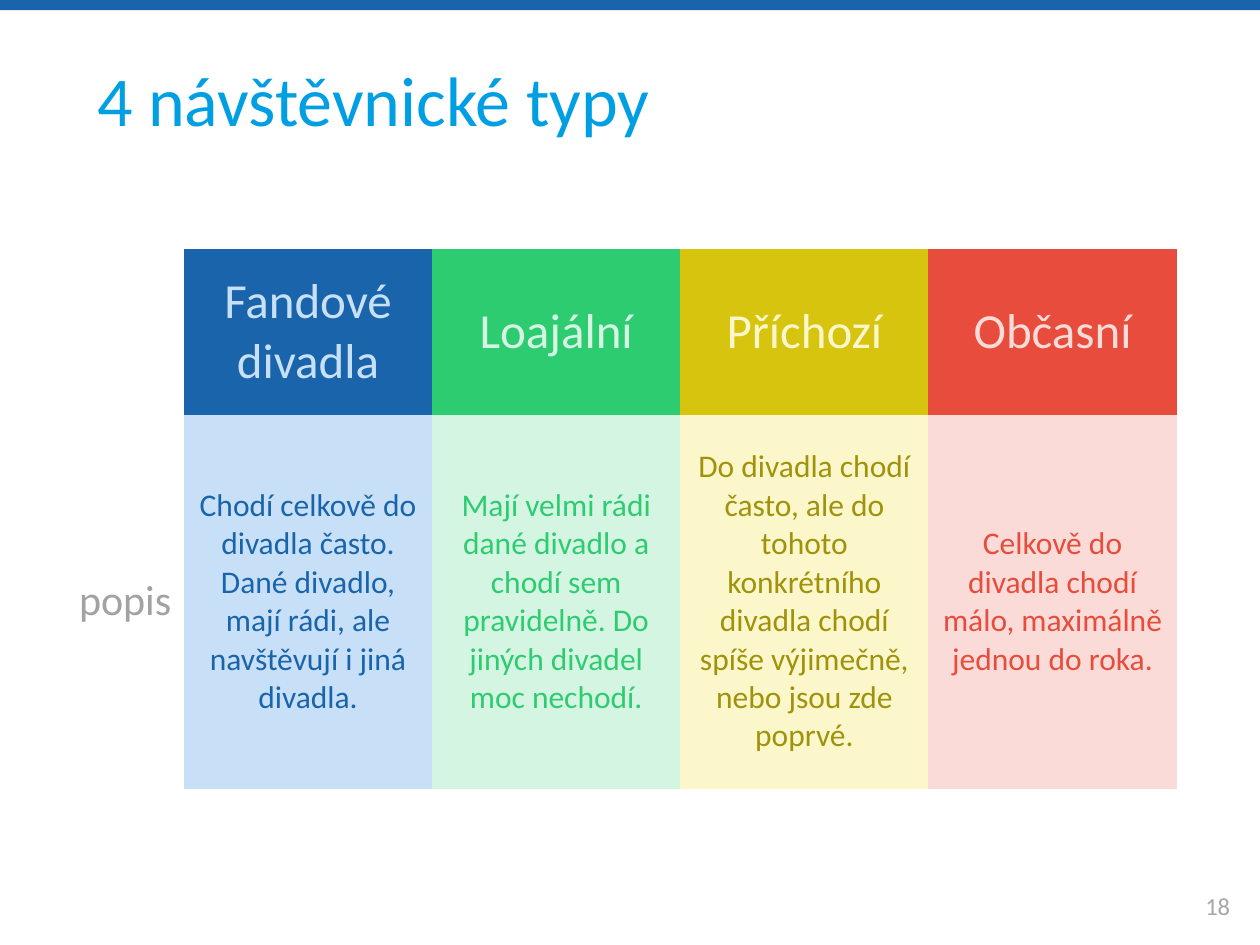
"""Build a slide that describes four types of theatre visitors in a table."""
from pptx import Presentation
from pptx.dml.color import RGBColor
from pptx.enum.shapes import MSO_SHAPE
from pptx.enum.text import MSO_ANCHOR, MSO_AUTO_SIZE, PP_ALIGN
from pptx.oxml.ns import qn
from pptx.util import Inches, Pt

LEFT, CENTER, RIGHT = PP_ALIGN.LEFT, PP_ALIGN.CENTER, PP_ALIGN.RIGHT
TOP, MIDDLE = MSO_ANCHOR.TOP, MSO_ANCHOR.MIDDLE
RECTANGLE = MSO_SHAPE.RECTANGLE
NO_AUTOFIT = MSO_AUTO_SIZE.NONE

FONT = "Calibri"
NO_STYLE_NO_GRID = "{2D5ABB26-0587-4C30-8999-92F81FD0307C}"
COLORS = {
    "title": "009FE3", "label": "A2A2A2", "number": "A6A6A6",
    "blue": "1964AA", "pale blue": "C8E0F7",
    "green": "2ECC71", "pale green": "D5F5E3",
    "yellow": "D6C40F", "pale yellow": "FBF7CA", "dark yellow": "A0930B",
    "red": "E74C3C", "pale red": "FADBD8",
}
TITLE = "4 návštěvnické typy"
PAGE_NUMBER = "18"
ROW_LABEL = "popis"
VISITOR_TYPES = [
    ("Fandové divadla",
     "Chodí celkově do divadla často. Dané divadlo, mají rádi, ale navštěvují i jiná divadla.",
     "blue", "pale blue", "blue"),
    ("Loajální",
     "Mají velmi rádi dané divadlo a chodí sem pravidelně. Do jiných divadel moc nechodí.",
     "green", "pale green", "green"),
    ("Příchozí",
     "Do divadla chodí často, ale do tohoto konkrétního divadla chodí spíše výjimečně, "
     "nebo jsou zde poprvé.",
     "yellow", "pale yellow", "dark yellow"),
    ("Občasní",
     "Celkově do divadla chodí málo, maximálně jednou do roka.",
     "red", "pale red", "red"),
]
LABEL_WIDTH, TYPE_WIDTH = 1.03, 1.97
ROW_HEIGHTS = (1.31, 2.97)


def rgb(name):
    return RGBColor.from_string(COLORS[name])


def write(text_frame, text, size, color, alignment):
    text_frame.text = text
    paragraph = text_frame.paragraphs[0]
    paragraph.alignment = alignment
    font = paragraph.runs[0].font
    font.name, font.size = FONT, Pt(size)
    font.color.rgb = rgb(color)


def fill_cell(cell, text, size, color, background, alignment=CENTER):
    write(cell.text_frame, text, size, color, alignment)
    cell.vertical_anchor = MIDDLE
    if background:
        cell.fill.solid()
        cell.fill.fore_color.rgb = rgb(background)


def add_top_band(slide, width):
    band = slide.shapes.add_shape(RECTANGLE, 0, 0, width, Inches(0.08))
    band.shadow.inherit = False
    band.fill.solid()
    band.fill.fore_color.rgb = rgb("blue")
    band.line.fill.background()


def add_title(slide):
    title = slide.shapes.title
    title.left, title.top = Inches(0.67), Inches(0.4)
    title.width, title.height = Inches(8.66), Inches(1.57)
    write(title.text_frame, TITLE, 40, "title", LEFT)
    title.text_frame.vertical_anchor = TOP
    title.text_frame.auto_size = NO_AUTOFIT


def add_page_number(slide):
    box = slide.shapes.add_textbox(Inches(9.33), Inches(6.99), Inches(0.67), Inches(0.4))
    box.text_frame.word_wrap = True
    box.text_frame.vertical_anchor = MIDDLE
    write(box.text_frame, PAGE_NUMBER, 14, "number", CENTER)


def add_visitor_table(slide):
    widths = [LABEL_WIDTH] + [TYPE_WIDTH] * len(VISITOR_TYPES)
    frame = slide.shapes.add_table(
        len(ROW_HEIGHTS), len(widths), Inches(0.43), Inches(1.98),
        Inches(sum(widths)), Inches(sum(ROW_HEIGHTS)))
    table = frame.table
    table.first_row = table.horz_banding = False
    next(table._tbl.iter(qn("a:tableStyleId"))).text = NO_STYLE_NO_GRID
    for column, width in zip(table.columns, widths):
        column.width = Inches(width)
    for row, height in zip(table.rows, ROW_HEIGHTS):
        row.height = Inches(height)
    fill_cell(table.cell(1, 0), ROW_LABEL, 24, "label", None, RIGHT)
    for index, (name, description, strong, pale, ink) in enumerate(VISITOR_TYPES, 1):
        fill_cell(table.cell(0, index), name, 28, pale, strong)
        fill_cell(table.cell(1, index), description, 18, ink, pale)


def main():
    presentation = Presentation()
    presentation.slide_width, presentation.slide_height = Inches(10), Inches(7.5)
    slide = presentation.slides.add_slide(presentation.slide_layouts.get_by_name("Title Only"))
    add_top_band(slide, presentation.slide_width)
    add_title(slide)
    add_page_number(slide)
    add_visitor_table(slide)
    presentation.save("out.pptx")


if __name__ == "__main__":
    main()
